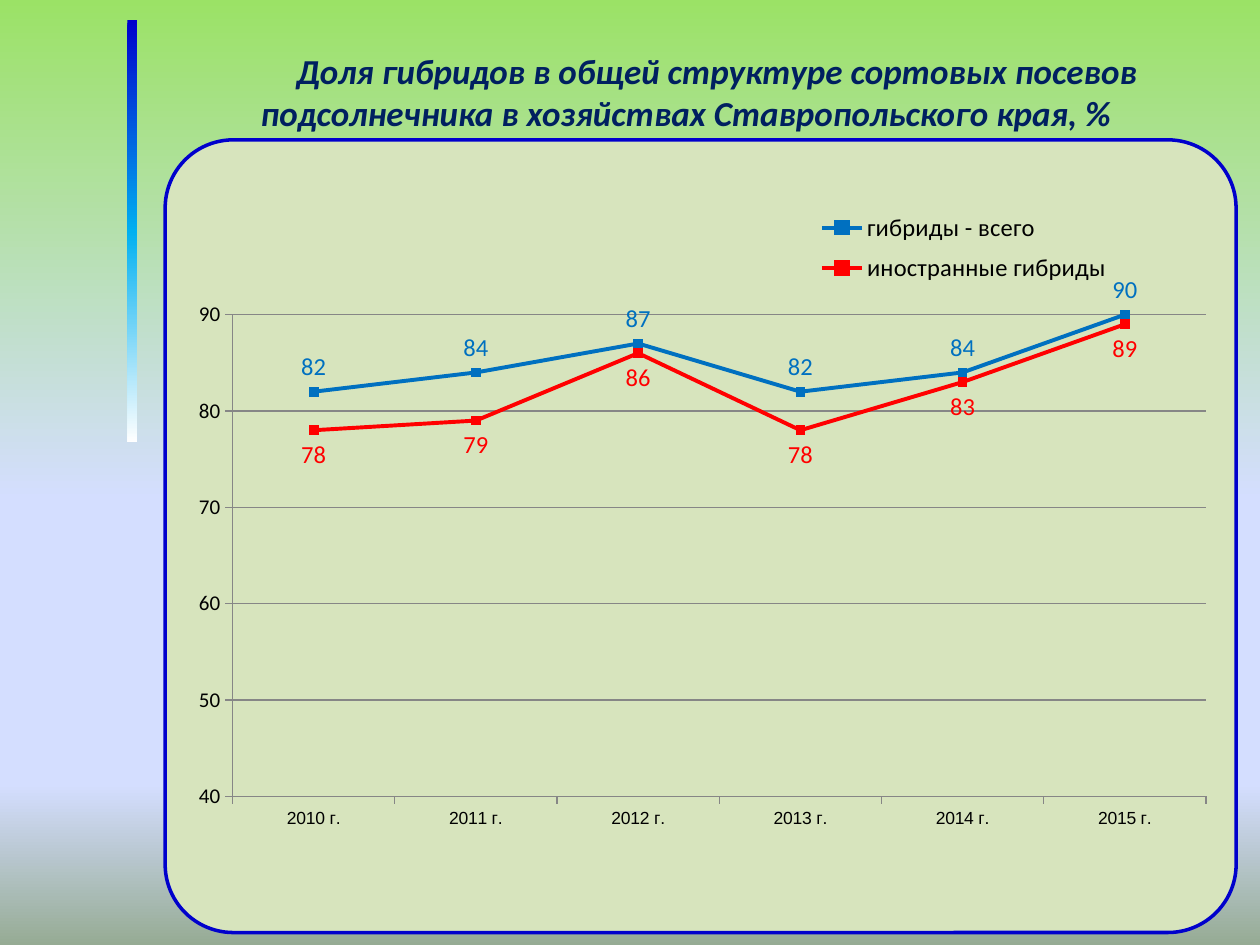
import copy

import pptx
import pptx.chart.data
import pptx.dml.color
import pptx.enum.chart
import pptx.enum.shapes
import pptx.enum.text
import pptx.oxml
import pptx.oxml.ns
import pptx.util

Cm = pptx.util.Cm
Pt = pptx.util.Pt
RGBColor = pptx.dml.color.RGBColor
LabelPosition = pptx.enum.chart.XL_LABEL_POSITION

GREEN = RGBColor(0x9B, 0xE2, 0x66)
LAVENDER = RGBColor(0xD4, 0xDE, 0xFF)
GREY_GREEN = RGBColor(0x96, 0xAB, 0x94)
ROYAL_BLUE = RGBColor(0x00, 0x00, 0xCC)
SKY_BLUE = RGBColor(0x00, 0xB0, 0xF0)
WHITE = RGBColor(0xFF, 0xFF, 0xFF)
PANEL_GREEN = RGBColor(0xD7, 0xE4, 0xBD)
NAVY = RGBColor(0x00, 0x20, 0x60)
BLACK = RGBColor(0x00, 0x00, 0x00)
AXIS_GREY = RGBColor(0x86, 0x86, 0x86)
BLUE = RGBColor(0x00, 0x70, 0xC0)
RED = RGBColor(0xFF, 0x00, 0x00)

YEARS = [f"{year} г." for year in range(2010, 2016)]
SERIES = [
    ("гибриды - всего", (82, 84, 87, 82, 84, 90), BLUE, LabelPosition.ABOVE),
    ("иностранные гибриды", (78, 79, 86, 78, 83, 89), RED, LabelPosition.BELOW),
]


def format_font(font, size, color=BLACK, name="Calibri", bold=False, italic=False):
    font.size, font.name = Pt(size), name
    font.bold, font.italic = bold, italic
    font.color.rgb = color


def write_text(box, text, align, indent=0, **font_format):
    paragraph = box.text_frame.paragraphs[0]
    paragraph.alignment = align
    properties = paragraph._p.get_or_add_pPr()
    properties.set("marL", "0")
    properties.set("indent", str(Cm(indent)))
    span = paragraph.add_run()
    span.text = text
    format_font(span.font, **font_format)


def fill_downward(fill, element, stops):
    """Give fill, which belongs to element, a top-to-bottom gradient of (percent, colour) stops."""
    fill.gradient()
    fill.gradient_angle = 270
    stop_list = element.xpath(".//a:gsLst")[0]
    template = copy.deepcopy(stop_list[0])
    for stop in list(stop_list):
        stop_list.remove(stop)
    for _ in stops:
        stop_list.append(copy.deepcopy(template))
    for stop, (percent, color) in zip(fill.gradient_stops, stops):
        stop.position = percent / 100
        stop.color.rgb = color


def manual_layout(x, y, width, height, inner=False):
    target = '<c:layoutTarget val="inner"/>' if inner else ""
    return pptx.oxml.parse_xml(
        f'<c:layout {pptx.oxml.ns.nsdecls("c")}><c:manualLayout>{target}'
        '<c:xMode val="edge"/><c:yMode val="edge"/>'
        f'<c:x val="{x}"/><c:y val="{y}"/><c:w val="{width}"/><c:h val="{height}"/>'
        "</c:manualLayout></c:layout>"
    )


class SlideBuilder:
    def __init__(self, deck):
        self.page = deck.slides.add_slide(deck.slide_layouts[5])

    def background(self, stops):
        fill_downward(self.page.background.fill, self.page.element, stops)

    def title(self, text, left, top, width, height):
        box = self.page.shapes.title
        box.left, box.top, box.width, box.height = map(Cm, (left, top, width, height))
        frame = box.text_frame
        frame.word_wrap = True
        frame.auto_size = pptx.enum.text.MSO_AUTO_SIZE.SHAPE_TO_FIT_TEXT
        frame.vertical_anchor = pptx.enum.text.MSO_ANCHOR.MIDDLE
        write_text(box, text, pptx.enum.text.PP_ALIGN.CENTER, indent=1.25,
                   size=20, color=NAVY, bold=True, italic=True)

    def gradient_bar(self, stops, *place):
        bar = self.page.shapes.add_shape(
            pptx.enum.shapes.MSO_SHAPE.RECTANGLE, *map(Cm, place))
        bar.shadow.inherit = False
        bar.line.fill.background()
        fill_downward(bar.fill, bar.element, stops)

    def rounded_panel(self, *place):
        panel = self.page.shapes.add_shape(
            pptx.enum.shapes.MSO_SHAPE.ROUNDED_RECTANGLE, *map(Cm, place))
        panel.adjustments[0] = 0.086
        panel.shadow.inherit = False
        panel.fill.solid()
        panel.fill.fore_color.rgb = PANEL_GREEN
        panel.line.color.rgb = ROYAL_BLUE
        panel.line.width = Pt(2)

    def line_chart(self, *place):
        data = pptx.chart.data.CategoryChartData()
        data.categories = YEARS
        for name, values, _, _ in SERIES:
            data.add_series(name, values)
        chart = self.page.shapes.add_chart(
            pptx.enum.chart.XL_CHART_TYPE.LINE_MARKERS, *map(Cm, place), data).chart
        chart.has_title = False
        format_font(chart.font, 18)
        chart.plots[0].vary_by_categories = False
        for series, (_, _, color, position) in zip(chart.plots[0].series, SERIES):
            self.style_series(series, color, position)
        self.style_axes(chart)
        self.place_legend(chart)
        plot_area = chart.element.xpath(".//c:plotArea")[0]
        for layout in plot_area.xpath("./c:layout"):
            plot_area.remove(layout)
        plot_area.insert(0, manual_layout(0.062, 0.182, 0.909, 0.735, inner=True))

    def style_series(self, series, color, position):
        series.smooth = False
        series.format.line.color.rgb = color
        series.format.line.width = Pt(2.25)
        marker = series.marker
        marker.style = pptx.enum.chart.XL_MARKER_STYLE.SQUARE
        marker.size = 5
        marker.format.fill.solid()
        marker.format.fill.fore_color.rgb = color
        marker.format.line.color.rgb = color
        labels = series.data_labels
        labels.show_value = True
        labels.position = position
        format_font(labels.font, 14, color)

    def style_axes(self, chart):
        values = chart.value_axis
        values.minimum_scale, values.maximum_scale, values.major_unit = 40, 90, 10
        values.has_major_gridlines = True
        format_font(values.tick_labels.font, 12)
        format_font(chart.category_axis.tick_labels.font, 10, name="Arial")
        for axis in (values, chart.category_axis):
            axis.major_tick_mark = pptx.enum.chart.XL_TICK_MARK.OUTSIDE
        for part in (values, values.major_gridlines, chart.category_axis):
            part.format.line.color.rgb = AXIS_GREY
            part.format.line.width = Pt(0.75)

    def place_legend(self, chart):
        chart.has_legend = True
        legend = chart.legend
        legend.position = pptx.enum.chart.XL_LEGEND_POSITION.RIGHT
        legend.include_in_layout = True
        format_font(legend.font, 14)
        element = chart.element.xpath(".//c:legend")[0]
        for layout in element.xpath("./c:layout"):
            element.remove(layout)
        element.xpath("./c:overlay")[0].addprevious(manual_layout(0.6, 0.01, 0.29, 0.14))


def main():
    deck = pptx.Presentation()
    deck.slide_width, deck.slide_height = Cm(25.4), Cm(19.05)
    builder = SlideBuilder(deck)
    builder.background([(0, GREEN), (53, LAVENDER), (83, LAVENDER), (100, GREY_GREEN)])
    builder.gradient_bar([(0, ROYAL_BLUE), (50, SKY_BLUE), (100, WHITE)],
                         2.57, 0.41, 0.2, 8.51)
    builder.rounded_panel(3.33, 2.82, 21.59, 15.98)
    builder.title("Доля гибридов в общей структуре сортовых посевов подсолнечника "
                  "в хозяйствах Ставропольского края, %", 2.77, 0.86, 22.12, 1.96)
    builder.line_chart(3.35, 3.94, 21.59, 13.21)
    deck.save("out.pptx")


if __name__ == "__main__":
    main()
